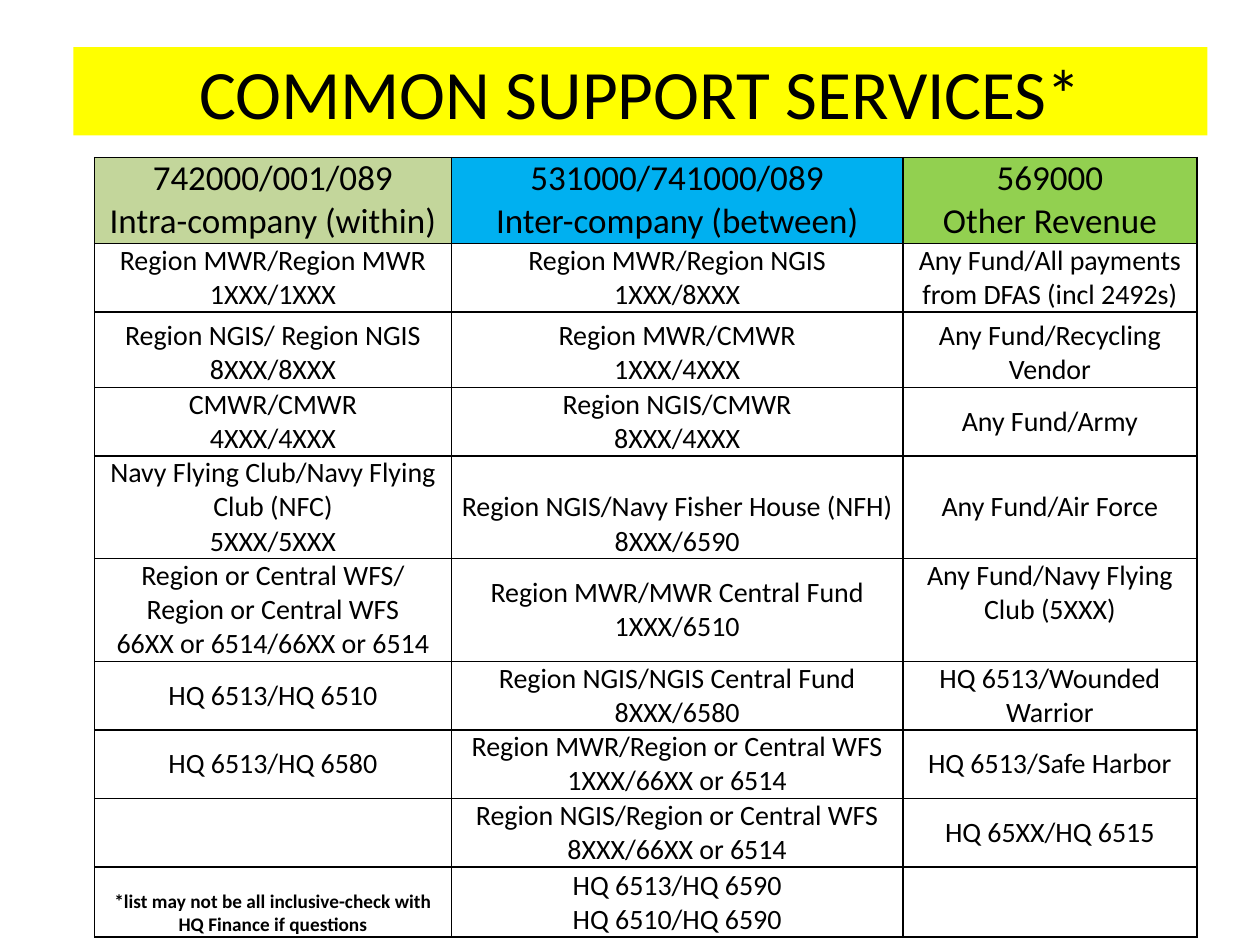
from dataclasses import dataclass

from lxml.etree import SubElement
from pptx import Presentation
from pptx.dml.color import RGBColor
from pptx.enum.shapes import MSO_SHAPE as Shape
from pptx.enum.text import MSO_ANCHOR as Anchor, PP_ALIGN as Align
from pptx.oxml.ns import qn
from pptx.util import Inches, Pt


@dataclass(frozen=True)
class Theme:
    font: str = "Calibri"
    ink: str = "000000"
    banner: str = "FFFF00"
    headers: tuple = ("C3D69B", "00B0F0", "92D050")
    title: float = 39.6
    header: int = 20
    body: int = 16
    note: int = 11
    border: int = 1


THEME = Theme()
COLS, ROWS = 120, 90  # grid cells of 1/12 inch

COLUMN_WIDTHS = (34, 43, 28)
ROW_HEIGHTS = (7.8, 6.4, 7.2, 6.4, 6.4, 9.5, 6.4, 6.4, 6.4, 6.7)
SERVICES = (
    ("742000/001/089\nIntra-company (within)",
     "531000/741000/089\nInter-company (between)",
     "569000\nOther Revenue"),
    ("Region MWR/Region MWR\n1XXX/1XXX",
     "Region MWR/Region NGIS\n1XXX/8XXX",
     "Any Fund/All payments from DFAS (incl 2492s)"),
    ("Region NGIS/ Region NGIS\n8XXX/8XXX",
     "Region MWR/CMWR\n1XXX/4XXX",
     "Any Fund/Recycling Vendor"),
    ("CMWR/CMWR\n4XXX/4XXX",
     "Region NGIS/CMWR\n8XXX/4XXX",
     "Any Fund/Army"),
    ("Navy Flying Club/Navy Flying Club (NFC)\n5XXX/5XXX",
     "Region NGIS/Navy Fisher House (NFH)\n8XXX/6590",
     "Any Fund/Air Force"),
    ("Region or Central WFS/\nRegion or Central WFS\n66XX or 6514/66XX or 6514",
     "Region MWR/MWR Central Fund\n1XXX/6510",
     "Any Fund/Navy Flying Club (5XXX)"),
    ("HQ 6513/HQ 6510",
     "Region NGIS/NGIS Central Fund\n8XXX/6580",
     "HQ 6513/Wounded Warrior"),
    ("HQ 6513/HQ 6580",
     "Region MWR/Region or Central WFS\n1XXX/66XX or 6514",
     "HQ 6513/Safe Harbor"),
    ("",
     "Region NGIS/Region or Central WFS\n8XXX/66XX or 6514",
     "HQ 65XX/HQ 6515"),
    ("*list may not be all inclusive-check with HQ Finance if questions",
     "HQ 6513/HQ 6590\nHQ 6510/HQ 6590",
     ""),
)
# Cells that differ from the bottom anchor, by (row, column)
ANCHORS = {
    **{(0, c): Anchor.TOP for c in range(3)},
    **{(r, 2): Anchor.MIDDLE for r in (1, 3, 4, 6, 7, 8)},
    **{cell: Anchor.MIDDLE for cell in ((5, 1), (6, 0), (7, 0))},
    (5, 2): Anchor.TOP,
}
NOTE_CELL = (9, 0)


class SlideBuilder:
    def __init__(self, prs, theme):
        self.theme = theme
        self.unit_x = prs.slide_width / COLS
        self.unit_y = prs.slide_height / ROWS
        self.s = prs.slides.add_slide(prs.slide_layouts[6])

    def x(self, columns):
        return round(columns * self.unit_x)

    def y(self, rows):
        return round(rows * self.unit_y)

    def box(self, left, top, width, height):
        return self.x(left), self.y(top), self.x(width), self.y(height)

    def text(self, tf, content, size, bold=False):
        tf.word_wrap = True
        style = {"name": self.theme.font, "size": Pt(size), "bold": bold}
        for i, line in enumerate(content.split("\n")):
            p = tf.paragraphs[0] if i == 0 else tf.add_paragraph()
            p.alignment = Align.CENTER
            if line:
                p.add_run().text = line
            for font in (p.font, *(r.font for r in p.runs)):
                for key, value in style.items():
                    setattr(font, key, value)
                font.color.rgb = RGBColor.from_string(self.theme.ink)

    def banner(self, content, *area):
        sp = self.s.shapes.add_shape(Shape.RECTANGLE, *self.box(*area))
        sp.shadow.inherit = False
        sp.fill.solid()
        sp.fill.fore_color.rgb = RGBColor.from_string(self.theme.banner)
        sp.line.fill.background()
        sp.text_frame.vertical_anchor = Anchor.MIDDLE
        self.text(sp.text_frame, content, self.theme.title)

    def border(self, cell):
        """Draw all four sides; the lines must come before the cell's fill."""
        tc_pr = cell._tc.get_or_add_tcPr()
        for i, side in enumerate(("lnL", "lnR", "lnT", "lnB")):
            ln = SubElement(tc_pr, qn(f"a:{side}"), w=str(Pt(self.theme.border)))
            fill = SubElement(ln, qn("a:solidFill"))
            SubElement(fill, qn("a:srgbClr"), val=self.theme.ink)
            tc_pr.insert(i, ln)

    def cell(self, cell, content, row, col):
        margins = {"margin_left": Inches(0.07), "margin_right": Inches(0.07),
                   "margin_top": 0, "margin_bottom": 0}
        for key, value in margins.items():
            setattr(cell, key, value)
        cell.vertical_anchor = ANCHORS.get((row, col), Anchor.BOTTOM)
        if row == 0:
            cell.fill.solid()
            cell.fill.fore_color.rgb = RGBColor.from_string(self.theme.headers[col])
        else:
            cell.fill.background()
        self.border(cell)
        is_note = (row, col) == NOTE_CELL
        size = (self.theme.header if row == 0
                else self.theme.note if is_note else self.theme.body)
        self.text(cell.text_frame, content, size, is_note)

    def table(self, data, left, top, widths, heights):
        area = self.box(left, top, sum(widths), sum(heights))
        table = self.s.shapes.add_table(len(heights), len(widths), *area).table
        table.first_row = table.horz_banding = False
        for column, width in zip(table.columns, widths):
            column.width = self.x(width)
        for row, height in zip(table.rows, heights):
            row.height = self.y(height)
        for r, texts in enumerate(data):
            for c, content in enumerate(texts):
                self.cell(table.cell(r, c), content, r, c)


def main():
    prs = Presentation()
    prs.slide_width, prs.slide_height = Inches(10), Inches(7.5)
    slide = SlideBuilder(prs, THEME)
    slide.banner("COMMON SUPPORT SERVICES*", 7, 4.5, 108, 8.4)
    slide.table(SERVICES, 9, 15, COLUMN_WIDTHS, ROW_HEIGHTS)
    prs.save("out.pptx")


if __name__ == "__main__":
    main()
